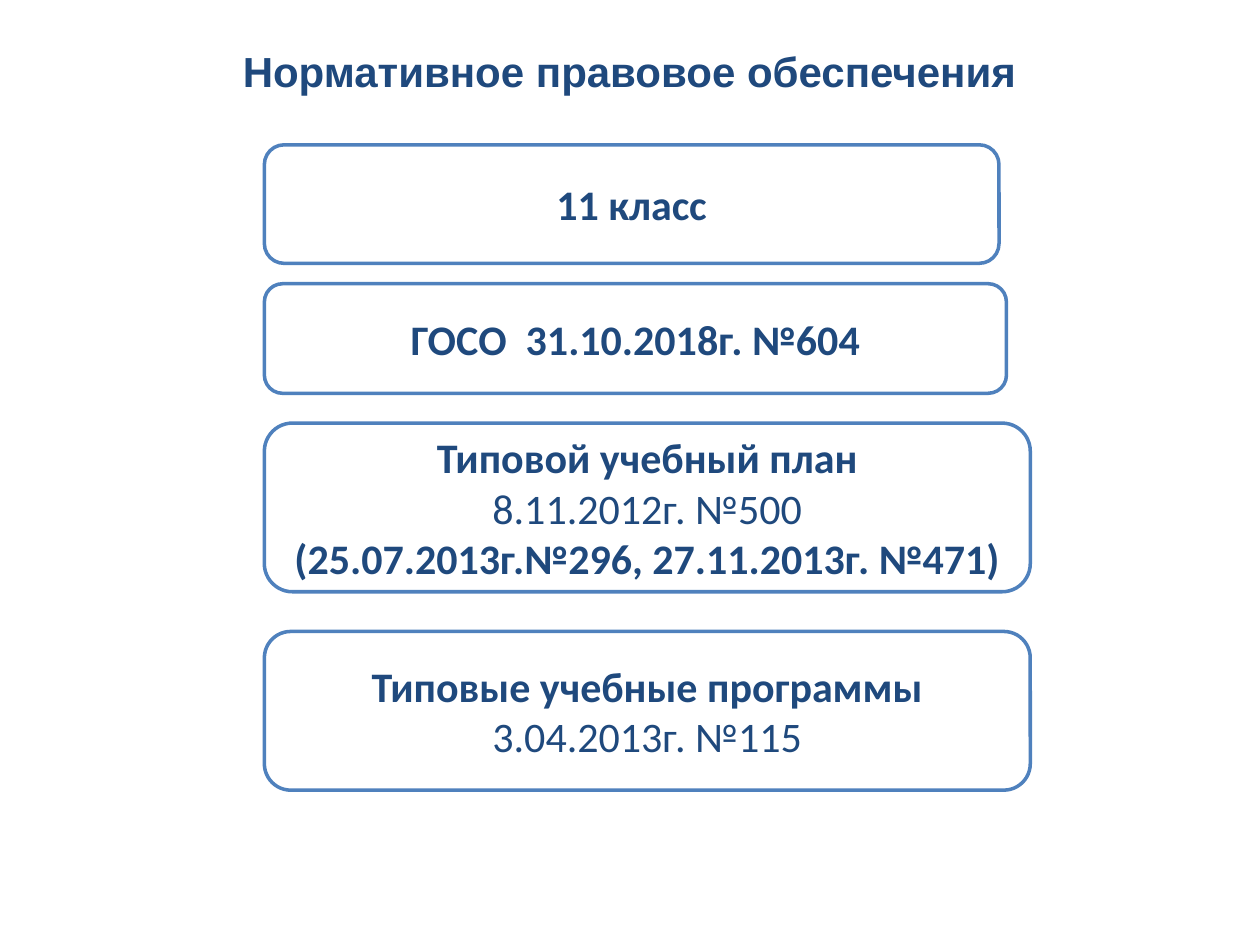
from pptx import Presentation
from pptx import util as u
from pptx.dml.color import RGBColor
from pptx.enum import shapes, text

NAVY = RGBColor(0x1F, 0x49, 0x7D)
BLUE = RGBColor(0x4F, 0x81, 0xBD)
WHITE = RGBColor(0xFF, 0xFF, 0xFF)

BOX_LEFT = 5.33
BOXES = [
    (2.92, 14.81, 2.39, [("11 класс", True)]),
    (5.72, 14.96, 2.21, [("ГОСО  31.10.2018г. №604", True)]),
    (8.53, 15.44, 3.4, [
        ("Типовой учебный план", True),
        ("8.11.2012г. №500", False),
        ("(25.07.2013г.№296, 27.11.2013г. №471)", True),
    ]),
    (12.73, 15.44, 3.2, [
        ("Типовые учебные программы", True),
        ("3.04.2013г. №115", False),
    ]),
]


def write_lines(shape, lines, font_name):
    frame = shape.text_frame
    frame.word_wrap = True
    frame.vertical_anchor = text.MSO_ANCHOR.MIDDLE
    for index, (line, bold) in enumerate(lines):
        paragraph = frame.add_paragraph() if index else frame.paragraphs[0]
        paragraph.alignment = text.PP_ALIGN.CENTER
        run = paragraph.add_run()
        run.text = line
        run.font.name = font_name
        run.font.size = u.Pt(24)
        run.font.bold = bold
        run.font.color.rgb = NAVY


def add_title(slide, title):
    shape = slide.shapes.add_textbox(u.Cm(4.09), u.Cm(0.53), u.Cm(17.2), u.Cm(1.8))
    write_lines(shape, [(title, True)], "Arial")


def add_box(slide, top, width, height, lines):
    shape = slide.shapes.add_shape(
        shapes.MSO_SHAPE.ROUNDED_RECTANGLE,
        u.Cm(BOX_LEFT), u.Cm(top), u.Cm(width), u.Cm(height),
    )
    shape.shadow.inherit = False
    shape.fill.solid()
    shape.fill.fore_color.rgb = WHITE
    shape.line.color.rgb = BLUE
    shape.line.width = u.Pt(2)
    write_lines(shape, lines, "Calibri")


def main():
    presentation = Presentation()
    presentation.slide_width = u.Cm(25.4)
    presentation.slide_height = u.Cm(19.05)
    slide = presentation.slides.add_slide(presentation.slide_layouts[6])
    add_title(slide, "Нормативное правовое обеспечения")
    for top, width, height, lines in BOXES:
        add_box(slide, top, width, height, lines)
    presentation.save("out.pptx")


if __name__ == "__main__":
    main()
